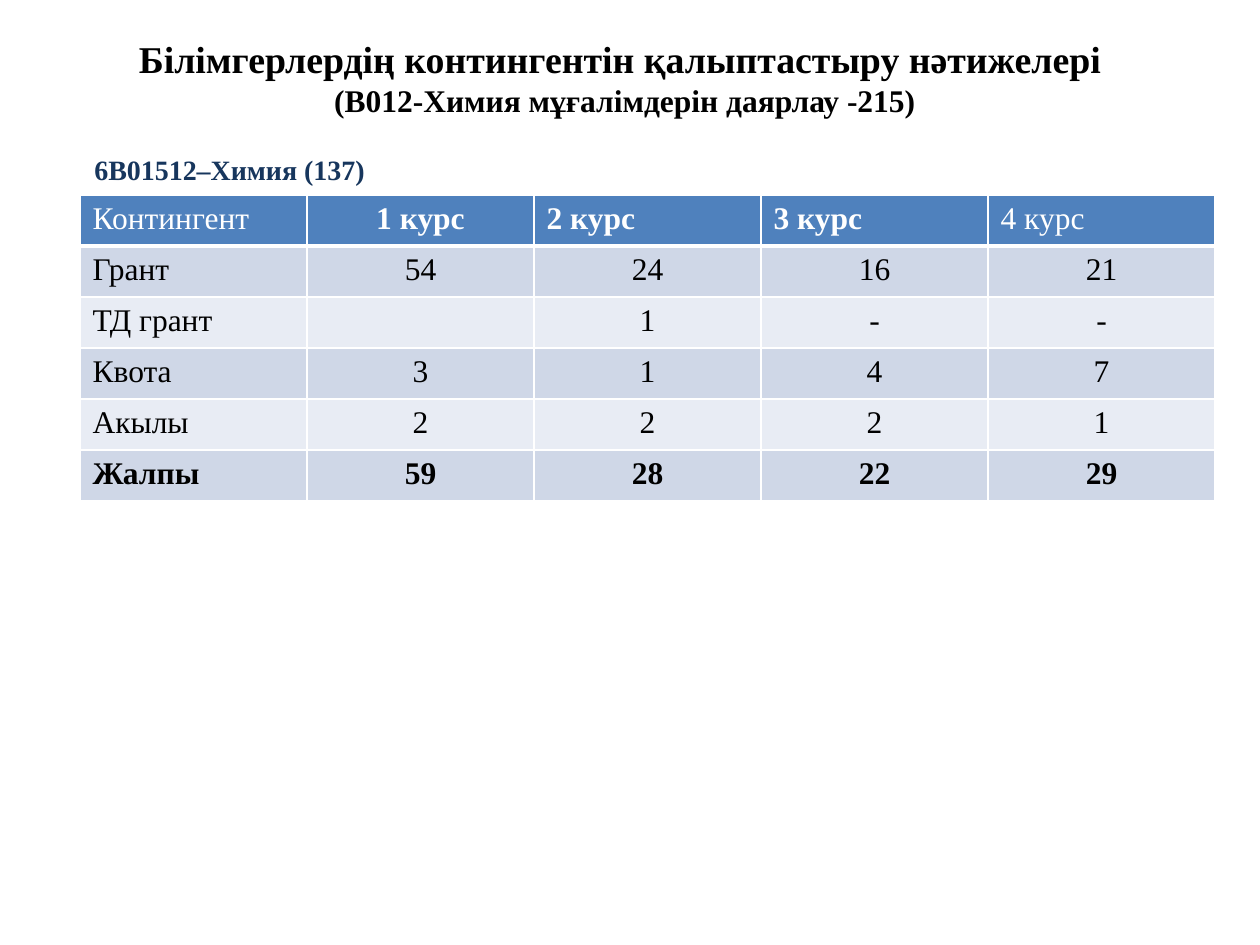
"""Build a slide with the student contingent table for 6B01512."""
from lxml.etree import SubElement
from pptx import Presentation
from pptx.dml.color import RGBColor
from pptx.enum.text import MSO_ANCHOR as Anchor, PP_ALIGN as Align
from pptx.oxml.ns import qn
from pptx.util import Emu, Pt

PX = 914400 / 126
FONT = "Times New Roman"
COLORS = {
    "black": "000000", "white": "FFFFFF", "navy": "17365D",
    "header": "4F81BD", "odd": "CFD7E7", "even": "E8ECF4",
}

HEADINGS = [
    {"box": (58, 38, 1134, 79), "align": Align.CENTER, "anchor": Anchor.MIDDLE, "color": "black",
     "lines": [("Білімгерлердің контингентін қалыптастыру нәтижелері ", 21.6),
               ("(В012-Химия мұғалімдерін даярлау -215)", 18)]},
    {"box": (82, 146, 600, 47), "align": Align.LEFT, "anchor": Anchor.TOP, "color": "navy",
     "lines": [("6B01512–Химия (137)", 16)]},
]
CONTINGENT = [
    ("Контингент", "1 курс", "2 курс", "3 курс", "4 курс"),
    ("Грант", "54", "24", "16", "21"),
    ("ТД грант", "", "1", "-", "-"),
    ("Квота", "3", "1", "4", "7"),
    ("Акылы", "2", "2", "2", "1"),
    ("Жалпы", "59", "28", "22", "29"),
]
TABLE_LEFT, TABLE_TOP, COLUMN_WIDTH, ROW_HEIGHT = 80, 195, 227, 51
BOLD_HEADERS = (1, 2, 3)
TOTAL_ROW = len(CONTINGENT) - 1


def px(length):
    return Emu(round(length * PX))


def add_run(paragraph, text, size, color, bold):
    run = paragraph.add_run()
    run.text = text
    style = {"name": FONT, "size": Pt(size), "bold": bold}
    for attribute, value in style.items():
        setattr(run.font, attribute, value)
    run.font.color.rgb = RGBColor.from_string(COLORS[color])


def add_heading(slide, heading):
    frame = slide.shapes.add_textbox(*map(px, heading["box"])).text_frame
    frame.word_wrap = True
    frame.vertical_anchor = heading["anchor"]
    paragraph = frame.paragraphs[0]
    paragraph.alignment = heading["align"]
    for index, (text, size) in enumerate(heading["lines"]):
        if index:
            paragraph.add_line_break()
        add_run(paragraph, text, size, heading["color"], True)


def add_borders(cell, row):
    widths = {"lnL": 1, "lnR": 1, "lnT": 3 if row == 1 else 1, "lnB": 3 if row == 0 else 1}
    properties = cell._tc.get_or_add_tcPr()
    for side, width in widths.items():
        border = SubElement(properties, qn(f"a:{side}"), w=str(Pt(width)))
        fill = SubElement(border, qn("a:solidFill"))
        SubElement(fill, qn("a:srgbClr"), val=COLORS["white"])


def fill_cell(cell, row, column, text):
    is_header = row == 0
    add_borders(cell, row)
    band = "header" if is_header else "odd" if row % 2 else "even"
    cell.fill.solid()
    cell.fill.fore_color.rgb = RGBColor.from_string(COLORS[band])
    paragraph = cell.text_frame.paragraphs[0]
    centred = column == 1 if is_header else column > 0
    paragraph.alignment = Align.CENTER if centred else Align.LEFT
    bold = column in BOLD_HEADERS if is_header else row == TOTAL_ROW
    if text:
        add_run(paragraph, text, 18, "white" if is_header else "black", bold)


def add_contingent_table(slide):
    rows, columns = len(CONTINGENT), len(CONTINGENT[0])
    table = slide.shapes.add_table(
        rows, columns, px(TABLE_LEFT), px(TABLE_TOP),
        px(columns * COLUMN_WIDTH), px(rows * ROW_HEIGHT)).table
    for row, texts in enumerate(CONTINGENT):
        for column, text in enumerate(texts):
            fill_cell(table.cell(row, column), row, column, text)


def main():
    presentation = Presentation()
    presentation.slide_width, presentation.slide_height = px(1260), px(945)
    slide = presentation.slides.add_slide(presentation.slide_layouts[6])
    title, programme = HEADINGS
    add_heading(slide, title)
    add_contingent_table(slide)
    add_heading(slide, programme)
    presentation.save("out.pptx")


if __name__ == "__main__":
    main()
